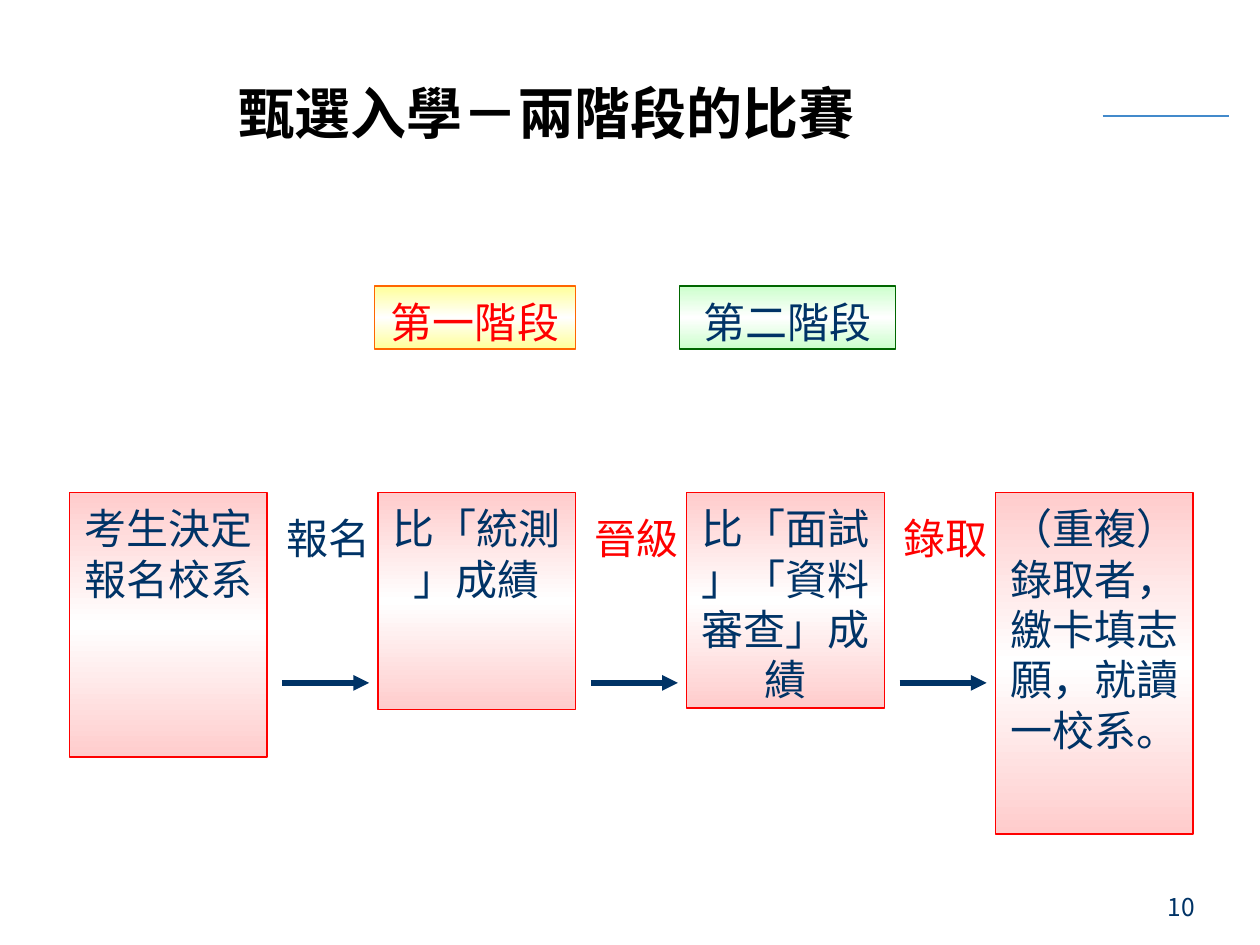
from copy import deepcopy

from pptx import Presentation
from pptx.dml.color import RGBColor
from pptx.enum.shapes import MSO_CONNECTOR as Connector, MSO_SHAPE as Shape
from pptx.enum.text import MSO_ANCHOR as Anchor, PP_ALIGN as Align
from pptx.oxml.ns import qn
from pptx.util import Inches, Pt
from lxml.etree import SubElement

FONT = "Noto Sans CJK TC"
NAVY, RED, PINK = "003366", "FF0000", "FFCCCC"
COLUMN_LEFT, COLUMN_STEP, COLUMN_WIDTH = 0.55, 2.45, 1.57
ROW_TOP, LABEL_TOP, STAGE_TOP, ARROW_Y = 3.91, 3.99, 2.27, 5.42
ARROW_OFFSET, ARROW_LENGTH, LABEL_OFFSET = 1.69, 0.69, 1.62
LINE_RATIO = 1.2

STEPS = [
    ("考生決定報名校系", 2.1),
    ("比「統測\n」成績", 1.72),
    ("比「面試\n」「資料審查」成績", 1.71),
    ("（重複）錄取者，繳卡填志願，就讀一校系。", 2.71),
]
MOVES = [("報名", NAVY), ("晉級", RED), ("錄取", RED)]
STAGES = [
    ("第一階段", 2.97, 1.6, "FFFF99", "FF6600", RED),
    ("第二階段", 5.39, 1.72, "CCFFCC", "006600", NAVY),
]


def rgb(value):
    """Turn a hex string into a colour."""
    return RGBColor.from_string(value)


def apply(target, values):
    """Set each named attribute on the target."""
    for name, value in values.items():
        setattr(target, name, value)


def column(index):
    """Return the left edge of a step column."""
    return COLUMN_LEFT + COLUMN_STEP * index


def write(box, text, size=24, color=NAVY, align=Align.CENTER, wrap=True, top=0.08):
    """Write one paragraph into a box."""
    frame = box.text_frame
    apply(frame, {"word_wrap": wrap, "vertical_anchor": Anchor.TOP,
                  "margin_top": Inches(top), "margin_bottom": 0})
    para = frame.paragraphs[0]
    para.text = text
    apply(para, {"alignment": align, "line_spacing": Pt(size * LINE_RATIO)})
    for span in para.runs:
        style(span, size, color)
    return para


def style(span, size, color, bold=False):
    """Format a run with the slide's font."""
    apply(span.font, {"size": Pt(size), "bold": bold, "name": FONT})
    span.font.color.rgb = rgb(color)
    SubElement(span.font._element, qn("a:ea"), typeface=FONT)


def add_title(page, text):
    """Place and format the title placeholder."""
    title = page.shapes.title
    apply(title, {"left": Inches(0.6), "top": Inches(0.58),
                  "width": Inches(7.48), "height": Inches(0.62)})
    apply(title.text_frame, {"text": text, "vertical_anchor": Anchor.MIDDLE,
                             "margin_top": 0, "margin_bottom": 0})
    para = title.text_frame.paragraphs[0]
    para.alignment = Align.CENTER
    style(para.runs[0], 32, "000000", bold=True)


def add_panel(page, bounds, text, edge, line, color=NAVY):
    """Add a rectangle that fades from its edge colour to white and back."""
    panel = page.shapes.add_shape(Shape.RECTANGLE, *map(Inches, bounds))
    panel.shadow.inherit = False
    panel.fill.gradient()
    panel.fill.gradient_angle = 90
    stops = panel._element.spPr.find(qn("a:gradFill")).find(qn("a:gsLst"))
    stops.insert(1, deepcopy(stops[0]))
    for stop, shade, position in zip(panel.fill.gradient_stops, (edge, "FFFFFF", edge), (0, 0.5, 1)):
        stop.color.rgb = rgb(shade)
        stop.position = position
    panel.line.color.rgb = rgb(line)
    panel.line.width = Pt(0.75)
    write(panel, text, color=color)


def add_label(page, bounds, text, **options):
    """Add a plain text box."""
    write(page.shapes.add_textbox(*map(Inches, bounds)), text, **options)


def add_line(page, left, y, length, color, width, arrow=False):
    """Add a horizontal line, with an arrowhead if asked."""
    line = page.shapes.add_connector(
        Connector.STRAIGHT, *map(Inches, (left, y, left + length, y)))
    line.line.color.rgb = rgb(color)
    line.line.width = Pt(width)
    if arrow:
        SubElement(line.line._get_or_add_ln(), qn("a:tailEnd"), type="triangle")
    SubElement(line._element.spPr, qn("a:effectLst"))


def main():
    """Build the two-stage admission slide."""
    deck = Presentation()
    apply(deck, {"slide_width": Inches(10), "slide_height": Inches(7.5)})
    page = deck.slides.add_slide(deck.slide_layouts[5])
    add_line(page, 8.75, 0.92, 1, "438ACB", 0.75)
    add_title(page, "甄選入學－兩階段的比賽")
    add_label(page, (7.16, 7, 2.42, 0.35), "10", size=14, align=Align.RIGHT)
    for text, left, width, edge, line, color in STAGES:
        add_panel(page, (left, STAGE_TOP, width, 0.5), text, edge, line, color)
    for index, (text, height) in enumerate(STEPS):
        add_panel(page, (column(index), ROW_TOP, COLUMN_WIDTH, height), text, PINK, RED)
    for index, (text, color) in enumerate(MOVES):
        add_line(page, column(index) + ARROW_OFFSET, ARROW_Y, ARROW_LENGTH, NAVY, 3, arrow=True)
        add_label(page, (column(index) + LABEL_OFFSET, LABEL_TOP, 0.87, 0.5),
                  text, color=color, wrap=False)
    deck.save("out.pptx")


if __name__ == "__main__":
    main()
